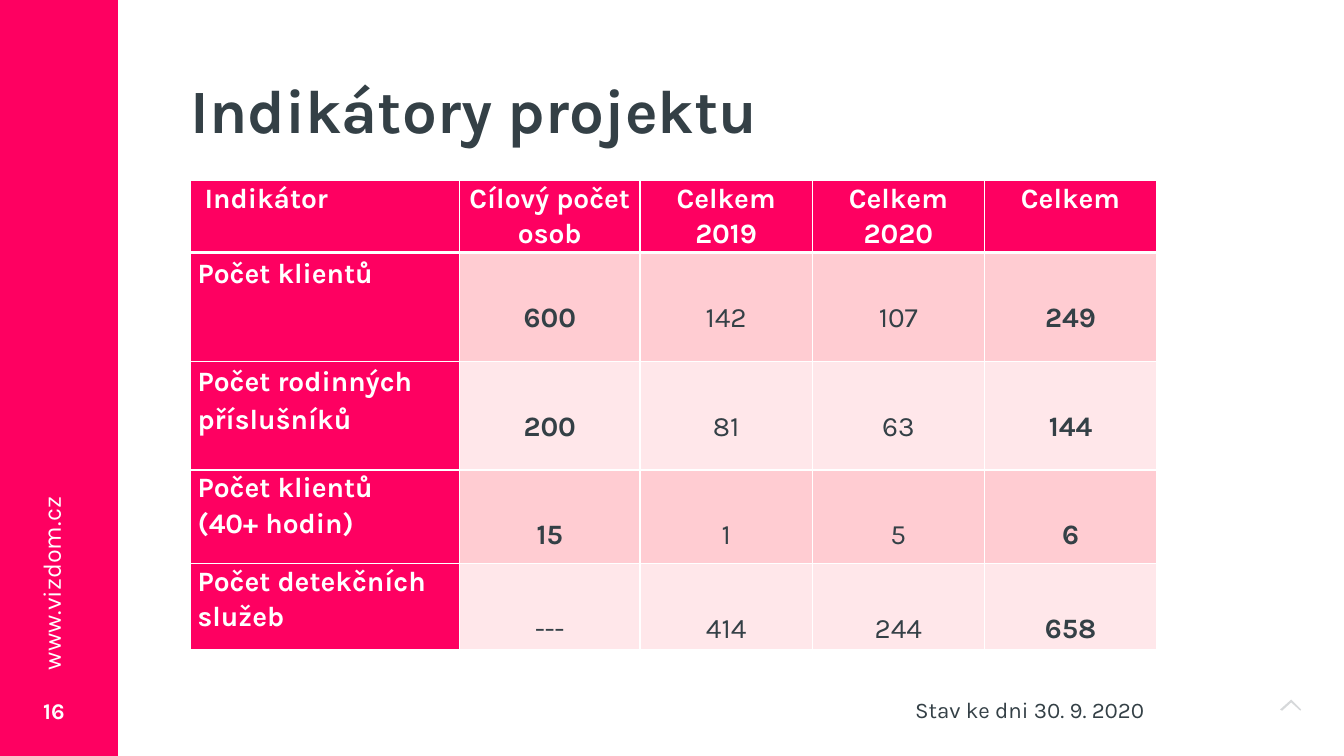
from dataclasses import dataclass

from lxml import etree
from pptx import Presentation
from pptx.dml.color import RGBColor
from pptx.enum import shapes, text
from pptx.oxml import ns
from pptx.util import Cm, Pt

TITLE = "Indikátory projektu"
WEBSITE = "www.vizdom.cz"
PAGE = "16"
STATUS = "Stav ke dni 30. 9. 2020"
HEADER = [" Indikátor", "Cílový počet osob", "Celkem 2019", "Celkem 2020", "Celkem"]
# label lines, line spacing, space before, values
INDICATORS = [
    (["Počet klientů"], 1.15, 5, ["600", "142", "107", "249"]),
    (["Počet rodinných příslušníků"], 1.15, 5, ["200", "81", "63", "144"]),
    (["Počet klientů", "(40+ hodin)"], 1.07, 0, ["15", "1", "5", "6"]),
    (["Počet detekčních služeb"], 1.07, 0, ["---", "414", "244", "658"]),
]
COLUMN_WIDTHS = [6.78, 4.55, 4.34, 4.34, 4.34]
ROW_HEIGHTS = [1.68, 2.74, 2.74, 2.36, 2.16]
CHEVRON = [(32.54, 17.63), (32.79, 17.88), (32.77, 17.91), (32.54, 17.7),
           (32.31, 17.91), (32.26, 17.88)]


@dataclass(frozen=True)
class Theme:
    font: str = "Karla"
    pink: str = "FE0061"
    dark: str = "344046"
    white: str = "FFFFFF"
    bands: tuple = ("FFCCD2", "FFE7EA")
    title: int = 44
    table: int = 20
    website: int = 18
    small: int = 16


THEME = Theme()
ALIGN = text.PP_ALIGN


def paint(fill, color):
    fill.solid()
    fill.fore_color.rgb = RGBColor.from_string(color)


def style(p, size, color, bold=False, align=ALIGN.LEFT, spacing=None, before=None):
    p.alignment = align
    if spacing:
        p.line_spacing = spacing
    if before:
        p.space_before = Pt(before)
    p.font.name = THEME.font
    p.font.size = Pt(size)
    p.font.bold = bold
    p.font.color.rgb = RGBColor.from_string(color)


def place(sp, left, top, width, height):
    sp.left, sp.top, sp.width, sp.height = Cm(left), Cm(top), Cm(width), Cm(height)


def add_label(s, box, words, size, color, **look):
    sp = s.shapes.add_textbox(*map(Cm, box))
    tf = sp.text_frame
    tf.word_wrap = True
    tf.text = words
    style(tf.paragraphs[0], size, color, **look)
    return sp


def set_borders(cell, bottom):
    """Draw white rules on all four sides; bottom is the lower rule's width in points."""
    tc_pr = cell._tc.get_or_add_tcPr()
    for i, (side, width) in enumerate([("L", 1), ("R", 1), ("T", 1), ("B", bottom)]):
        ln = etree.Element(ns.qn(f"a:ln{side}"), w=str(Pt(width)))
        fill = etree.SubElement(ln, ns.qn("a:solidFill"))
        etree.SubElement(fill, ns.qn("a:srgbClr"), val=THEME.white)
        tc_pr.insert(i, ln)


def fill_cell(cell, lines, fill, color, bottom=1, **look):
    cell.margin_left = cell.margin_right = Cm(0.18)
    cell.margin_top = cell.margin_bottom = 0
    paint(cell.fill, fill)
    set_borders(cell, bottom)
    cell.text = "\n".join(lines)
    for p in cell.text_frame.paragraphs:
        style(p, THEME.table, color, **look)


def add_indicator_table(s):
    frame = s.shapes.add_table(len(ROW_HEIGHTS), len(COLUMN_WIDTHS),
                               Cm(4.8), Cm(4.55), Cm(24.35), Cm(11.68))
    table = frame.table
    for column, width in zip(table.columns, COLUMN_WIDTHS):
        column.width = Cm(width)
    for row, height in zip(table.rows, ROW_HEIGHTS):
        row.height = Cm(height)
    for c, words in enumerate(HEADER):
        fill_cell(table.cell(0, c), [words], THEME.pink, THEME.white, bottom=3, bold=True,
                  align=ALIGN.CENTER if c else ALIGN.LEFT, spacing=1.07)
    for r, (label, spacing, before, values) in enumerate(INDICATORS, 1):
        fill_cell(table.cell(r, 0), label, THEME.pink, THEME.white, bold=True,
                  spacing=spacing, before=before)
        for c, value in enumerate(values, 1):
            bold = c in (1, len(values)) and value != "---"
            fill_cell(table.cell(r, c), [value], THEME.bands[(r - 1) % 2], THEME.dark,
                      bold=bold, align=ALIGN.CENTER, spacing=2.5)


def add_chevron(s):
    points = [(Cm(x), Cm(y)) for x, y in CHEVRON]
    builder = s.shapes.build_freeform(*points[0])
    builder.add_line_segments(points[1:], close=True)
    sp = builder.convert_to_shape()
    sp.shadow.inherit = False
    paint(sp.fill, THEME.dark)
    sp.line.fill.background()
    color = sp.fill._xPr.find(".//" + ns.qn("a:srgbClr"))
    etree.SubElement(color, ns.qn("a:alpha"), val="20000")


def add_sidebar(s):
    bar = s.shapes.add_shape(shapes.MSO_SHAPE.RECTANGLE, 0, 0, Cm(2.97), Cm(19.28))
    bar.shadow.inherit = False
    paint(bar.fill, THEME.pink)
    bar.line.fill.background()
    page = add_label(s, (0.84, 17.15, 1.27, 1.52), PAGE, THEME.small, THEME.white, bold=True)
    page.text_frame.vertical_anchor = text.MSO_ANCHOR.MIDDLE
    website = add_label(s, (-1.73, 13.59, 6.05, 1.04), WEBSITE, THEME.website, THEME.white)
    website.rotation = 270


def set_title(s):
    sp = s.shapes.title
    place(sp, 4.8, 1.02, 26.75, 3.68)
    tf = sp.text_frame
    tf.margin_left = tf.margin_right = 0
    tf.vertical_anchor = text.MSO_ANCHOR.MIDDLE
    tf.text = TITLE
    style(tf.paragraphs[0], THEME.title, THEME.dark, bold=True, spacing=0.9)


def main():
    prs = Presentation()
    prs.slide_width, prs.slide_height = Cm(33.87), Cm(19.05)
    s = prs.slides.add_slide(prs.slide_layouts[5])
    add_chevron(s)
    add_sidebar(s)
    set_title(s)
    add_indicator_table(s)
    add_label(s, (18.75, 17.42, 10.34, 0.94), STATUS, THEME.small, THEME.dark,
              align=ALIGN.RIGHT)
    prs.save("out.pptx")


if __name__ == "__main__":
    main()
